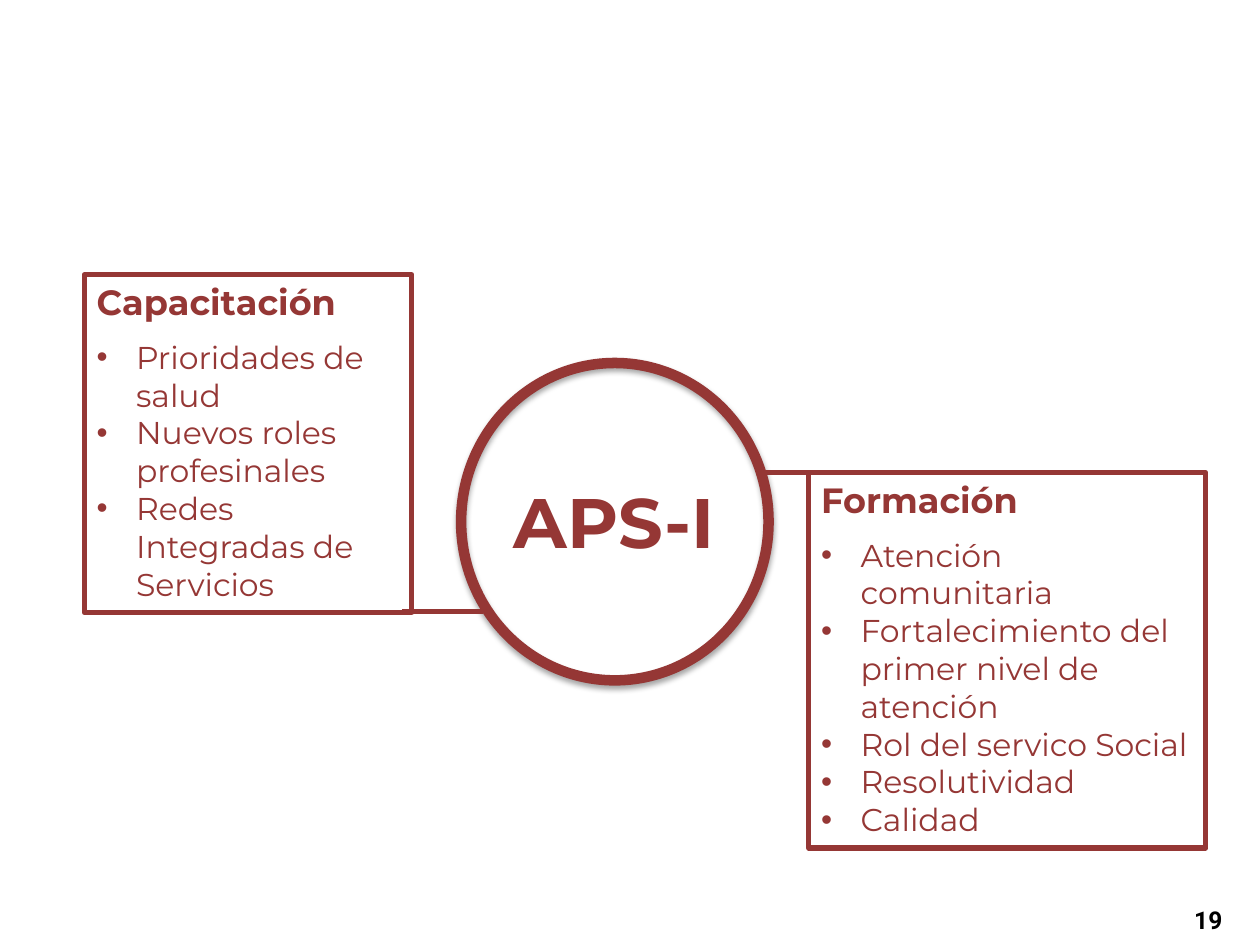
from lxml import etree
from pptx import Presentation
from pptx.dml.color import RGBColor
from pptx.enum.shapes import MSO_CONNECTOR as Connector, MSO_SHAPE as Shape
from pptx.enum.text import MSO_AUTO_SIZE as AutoSize, PP_ALIGN as Align
from pptx.oxml.ns import qn
from pptx.util import Pt

RED = "953735"


def paint(color_format, color):
    color_format.rgb = RGBColor.from_string(color)


def write(para, text, size, color=RED, bold=False, font="Montserrat"):
    """Fill a paragraph with one formatted run."""
    para.text = text
    span = para.runs[0]
    span.font.name, span.font.size, span.font.bold = font, Pt(size), bold
    paint(span.font.color, color)


deck = Presentation()
deck.slide_width, deck.slide_height = Pt(720), Pt(540)
page = deck.slides.add_slide(deck.slide_layouts[6])

# Central circle with a soft shadow below
circle = page.shapes.add_shape(Shape.OVAL, Pt(263.5), Pt(207.4), Pt(175.7), Pt(181.4))
circle.fill.background()
circle.line.width = Pt(6)
paint(circle.line.color, RED)
effects = etree.SubElement(circle.element.spPr, qn("a:effectLst"))
shadow = etree.SubElement(effects, qn("a:outerShdw"), blurRad=str(Pt(3.1)),
                          dist=str(Pt(1.8)), dir="5400000", rotWithShape="0")
shade = etree.SubElement(shadow, qn("a:srgbClr"), val="000000")
etree.SubElement(shade, qn("a:alpha"), val="35000")

label = page.shapes.add_textbox(Pt(286.6), Pt(270), Pt(141.8), Pt(55.4))
label.text_frame.word_wrap = True
write(label.text_frame.paragraphs[0], "APS-I", 40, bold=True)

# Framed lists: left, top, width, height, heading, items
panels = [
    (48.2, 157, 187.2, 193, "Capacitación",
     ["Prioridades de salud", "Nuevos roles profesinales",
      "Redes Integradas de Servicios"]),
    (462.2, 270, 226.8, 214.6, "Formación",
     ["Atención comunitaria", "Fortalecimiento del primer nivel de atención",
      "Rol del servico Social", "Resolutividad", "Calidad"]),
]
for left, top, width, height, heading, items in panels:
    box = page.shapes.add_textbox(Pt(left), Pt(top), Pt(width), Pt(height))
    box.line.width = Pt(3)
    paint(box.line.color, RED)
    frame = box.text_frame
    frame.word_wrap = True
    frame.auto_size = AutoSize.SHAPE_TO_FIT_TEXT
    write(frame.paragraphs[0], heading, 20, bold=True)
    frame.paragraphs[0].space_after = Pt(8.5)
    for item in items:
        para = frame.add_paragraph()
        props = para._p.get_or_add_pPr()
        props.set("marL", str(Pt(22.5)))
        props.set("indent", str(Pt(-22.5)))
        etree.SubElement(props, qn("a:buFont"), typeface="Arial")
        etree.SubElement(props, qn("a:buChar"), char="•")
        write(para, item, 18)

# Lines from the frames to the circle
for start, end, y in [(229.7, 275.8, 349.4), (433.4, 468, 270)]:
    link = page.shapes.add_connector(Connector.STRAIGHT, Pt(start), Pt(y), Pt(end), Pt(y))
    link.line.width = Pt(3)
    paint(link.line.color, RED)
    etree.SubElement(link.element.spPr, qn("a:effectLst"))

number = page.shapes.add_textbox(Pt(537.8), Pt(513.4), Pt(167.8), Pt(28.8))
number.text_frame.word_wrap = True
write(number.text_frame.paragraphs[0], "19", 14, "000000", True, "Roboto")
number.text_frame.paragraphs[0].alignment = Align.RIGHT

deck.save("out.pptx")
